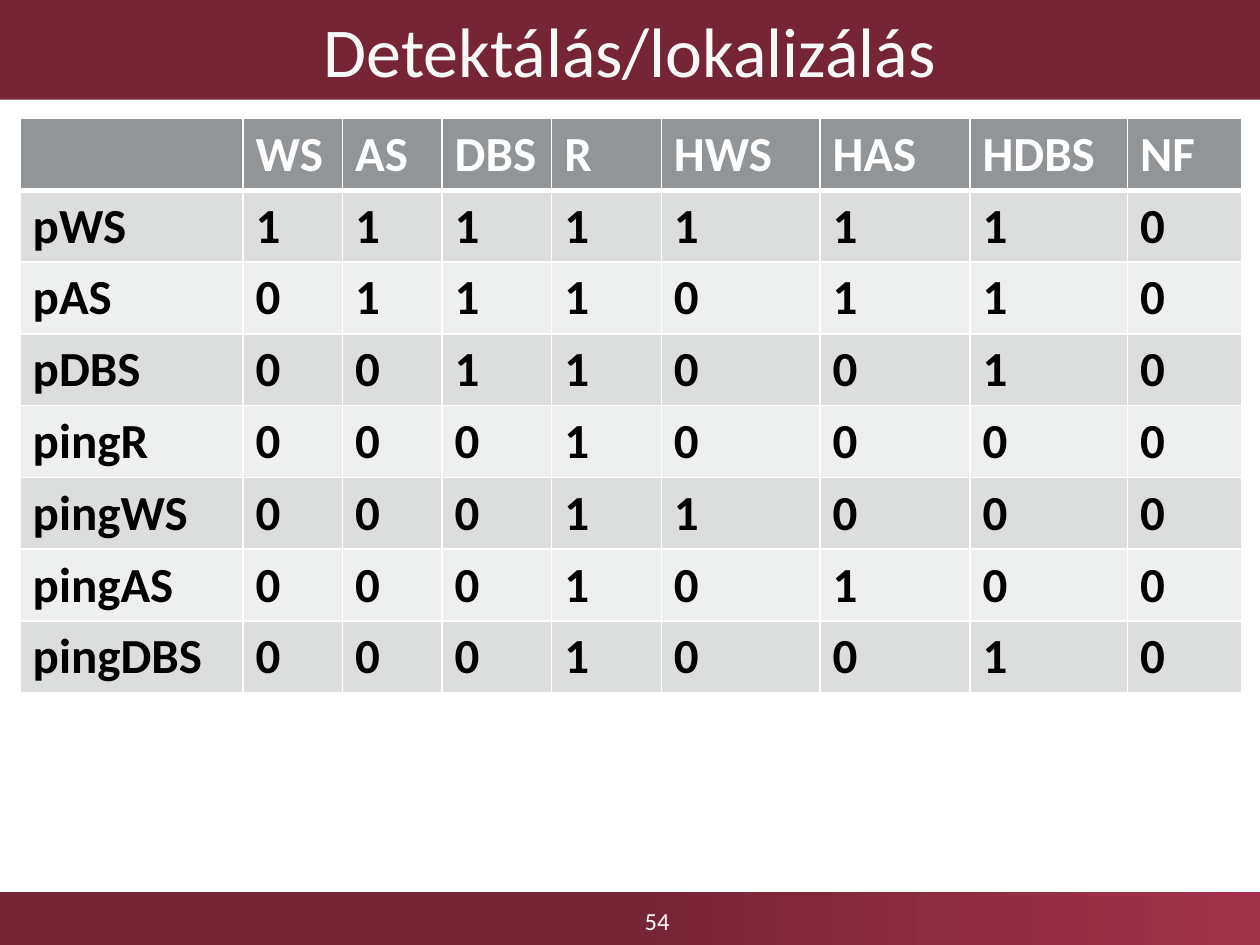
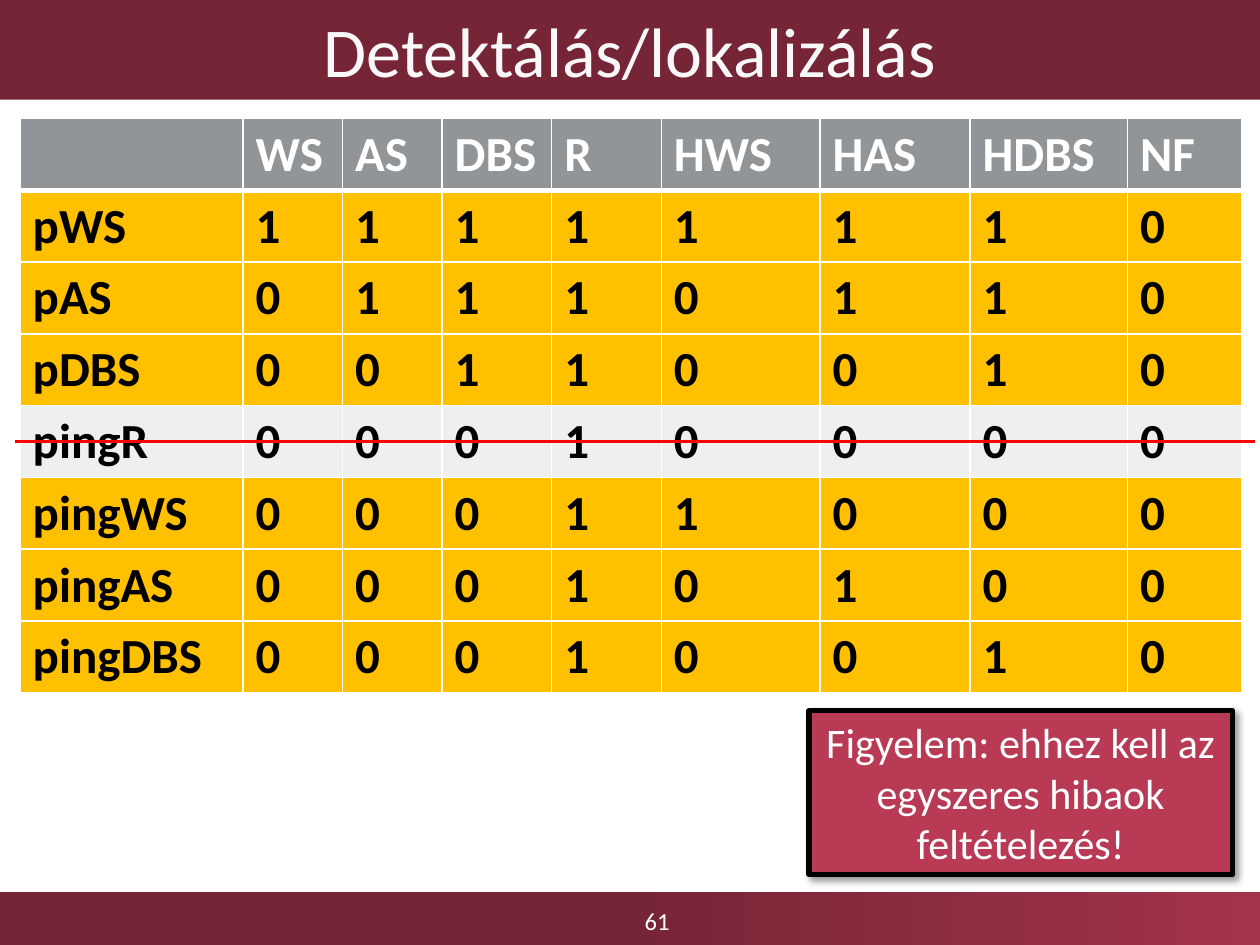
from lxml import etree
from pptx import Presentation
from pptx.dml.color import RGBColor
from pptx.enum.shapes import MSO_CONNECTOR as Connector, MSO_SHAPE as Preset
from pptx.enum.text import MSO_ANCHOR as Anchor, PP_ALIGN as Align
from pptx.oxml.ns import qn
from pptx.util import Inches, Pt

COLOURS = {
    "band": "762536", "band_end": "A3334B", "title": "F8F8F8",
    "white": "FFFFFF", "black": "000000", "header": "929598",
    "odd_row": "DCDDDD", "even_row": "EEEFEF", "marked_row": "FFC000",
    "strike": "FF0000", "note": "B83A55",
}
FONT = "Calibri"
TITLE = "Detektálás/lokalizálás"

# Regions: left, top, width, height
TITLE_BOX = (0, 0, 10, 0.79)
FOOTER_BOX = (0, 7.08, 10, 0.42)
TABLE_BOX = (0.16, 0.94, 9.69, 4.56)
NOTE_BOX = (6.42, 5.64, 3.36, 1.3)

# Each probe's outcome per fault, in the order of FAULTS
FAULTS = ["WS", "AS", "DBS", "R", "HWS", "HAS", "HDBS", "NF"]
PROBES = {
    "pWS": "11111110",
    "pAS": "01110110",
    "pDBS": "00110010",
    "pingR": "00010000",
    "pingWS": "00011000",
    "pingAS": "00010100",
    "pingDBS": "00010010",
}
COLUMN_WIDTHS = [1.77, 0.79, 0.79, 0.87, 0.87, 1.26, 1.19, 1.25, 0.91]


def rgb(name):
    return RGBColor.from_string(COLOURS[name])


def write(frame, text, colour, size, bold=False, align=Align.CENTER):
    frame.word_wrap = True
    paragraph = frame.paragraphs[0]
    paragraph.alignment = align
    run = paragraph.add_run()
    run.text = text
    formats = {"name": FONT, "size": Pt(size), "bold": bold}
    for attribute, value in formats.items():
        setattr(run.font, attribute, value)
    run.font.color.rgb = rgb(colour)


def add_box(slide, box, fill=None, preset=Preset.RECTANGLE):
    shape = slide.shapes.add_shape(preset, *map(Inches, box))
    shape.shadow.inherit = False
    shape.line.fill.background()
    shape.text_frame.vertical_anchor = Anchor.MIDDLE
    if fill:
        shape.fill.solid()
        shape.fill.fore_color.rgb = rgb(fill)
    return shape


def add_title(slide, box):
    write(add_box(slide, box, "band").text_frame, TITLE, "title", 40)


def add_footer(slide, box, number):
    left, top, width, height = box
    # Band: plain up to the middle, then lighter
    fill = add_box(slide, box).fill
    fill.gradient()
    fill.gradient_angle = 0
    stops = zip(fill.gradient_stops, (0.5, 1), ("band", "band_end"))
    for stop, position, colour in stops:
        stop.position = position
        stop.color.rgb = rgb(colour)
    # Page number
    number_box = (left + 3.59, top + 0.03, 3.25, height - 0.03)
    text_box = slide.shapes.add_textbox(*map(Inches, number_box))
    text_box.text_frame.vertical_anchor = Anchor.MIDDLE
    write(text_box.text_frame, str(number), "white", 14)


def set_borders(cell, widths):
    properties = cell._tc.get_or_add_tcPr()
    for side in ("lnL", "lnR", "lnT", "lnB"):
        line = etree.SubElement(properties, qn(f"a:{side}"),
                                w=str(Pt(widths.get(side, 1))))
        fill = etree.SubElement(line, qn("a:solidFill"))
        etree.SubElement(fill, qn("a:srgbClr"), val=COLOURS["white"])


def row_fill(row, probe, marked):
    if row == 0:
        return "header"
    if probe in marked:
        return "marked_row"
    return "odd_row" if row % 2 else "even_row"


def add_fault_table(slide, box, marked=()):
    rows = [["", *FAULTS]]
    rows += [[probe, *outcomes] for probe, outcomes in PROBES.items()]
    frame = slide.shapes.add_table(len(rows), len(rows[0]), *map(Inches, box))
    table = frame.table
    for column, width in zip(table.columns, COLUMN_WIDTHS):
        column.width = Inches(width)
    # The header is set off by a thicker rule
    thick_sides = {0: {"lnB": 3}, 1: {"lnT": 3}}
    for row, values in enumerate(rows):
        fill = row_fill(row, values[0], marked)
        for column, value in enumerate(values):
            cell = table.cell(row, column)
            set_borders(cell, thick_sides.get(row, {}))
            cell.fill.solid()
            cell.fill.fore_color.rgb = rgb(fill)
            if value:
                write(cell.text_frame, value, "black" if row else "white",
                      28, bold=True, align=Align.LEFT)


def add_strike(slide, box, probe):
    left, top, width, height = box
    row_height = height / (len(PROBES) + 1)
    row = list(PROBES).index(probe) + 1
    y = Inches(top + (row + 0.5) * row_height)
    line = slide.shapes.add_connector(
        Connector.STRAIGHT, Inches(left - 0.04), y,
        Inches(left + width + 0.11), y)
    line.line.color.rgb = rgb("strike")
    line.line.width = Pt(2)
    etree.SubElement(line._element.spPr, qn("a:effectLst"))


def add_note(slide, box, text):
    shape = add_box(slide, box, "note", Preset.FLOWCHART_PROCESS)
    shape.line.color.rgb = rgb("black")
    shape.line.width = Pt(3)
    write(shape.text_frame, text, "white", 24)
    # Soft shadow towards the lower right
    effects = shape._element.spPr.find(qn("a:effectLst"))
    shadow = etree.SubElement(
        effects, qn("a:outerShdw"), blurRad=str(Pt(4)), dist=str(Pt(3)),
        dir=str(45 * 60000), algn="tl", rotWithShape="0")
    colour = etree.SubElement(shadow, qn("a:srgbClr"), val=COLOURS["black"])
    etree.SubElement(colour, qn("a:alpha"), val="40000")


def add_fault_slide(presentation, number, marked=()):
    slide = presentation.slides.add_slide(presentation.slide_layouts[6])
    add_footer(slide, FOOTER_BOX, number)
    add_title(slide, TITLE_BOX)
    add_fault_table(slide, TABLE_BOX, marked)
    return slide


def main():
    presentation = Presentation()
    presentation.slide_width = Inches(10)
    presentation.slide_height = Inches(7.5)

    # All probes
    add_fault_slide(presentation, 54)

    # Chosen probes, with the redundant one struck out
    redundant = "pingR"
    slide = add_fault_slide(presentation, 61, set(PROBES) - {redundant})
    add_strike(slide, TABLE_BOX, redundant)
    add_note(slide, NOTE_BOX,
             "Figyelem: ehhez kell az egyszeres hibaok feltételezés!")

    presentation.save("out.pptx")


if __name__ == "__main__":
    main()
